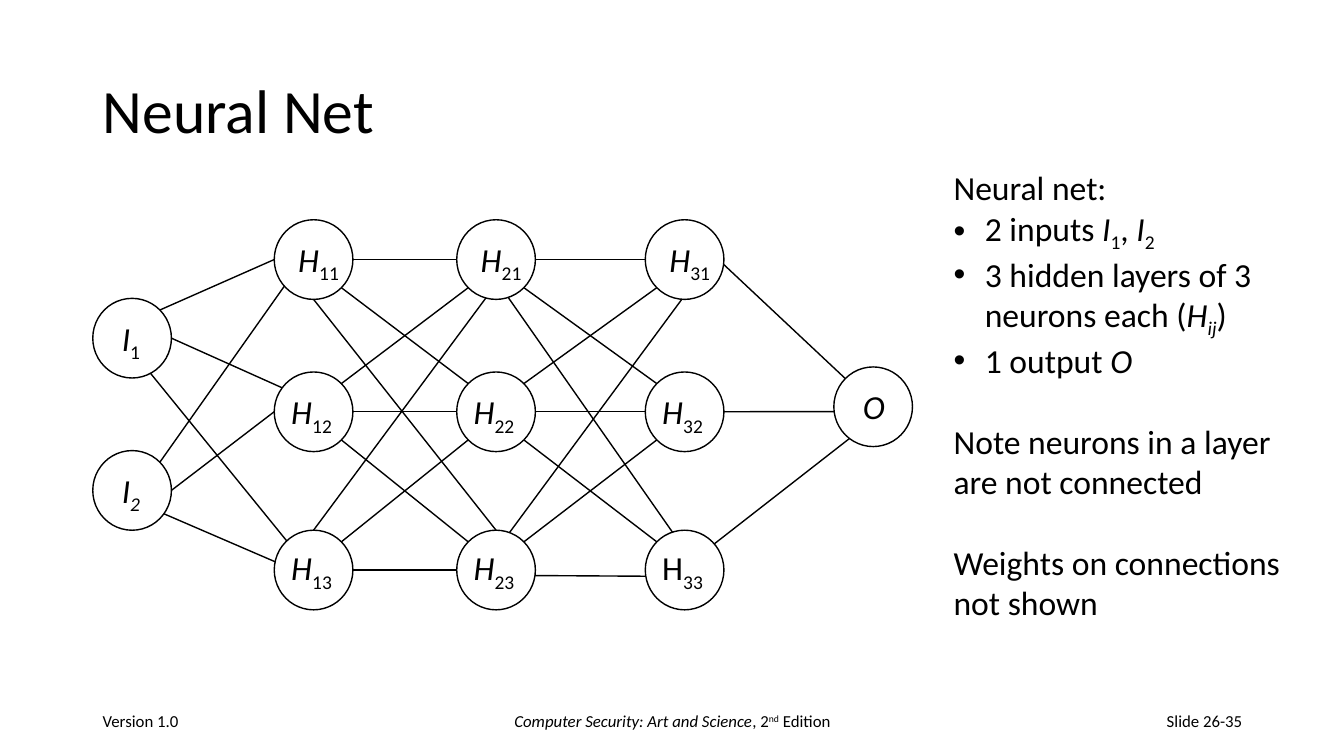
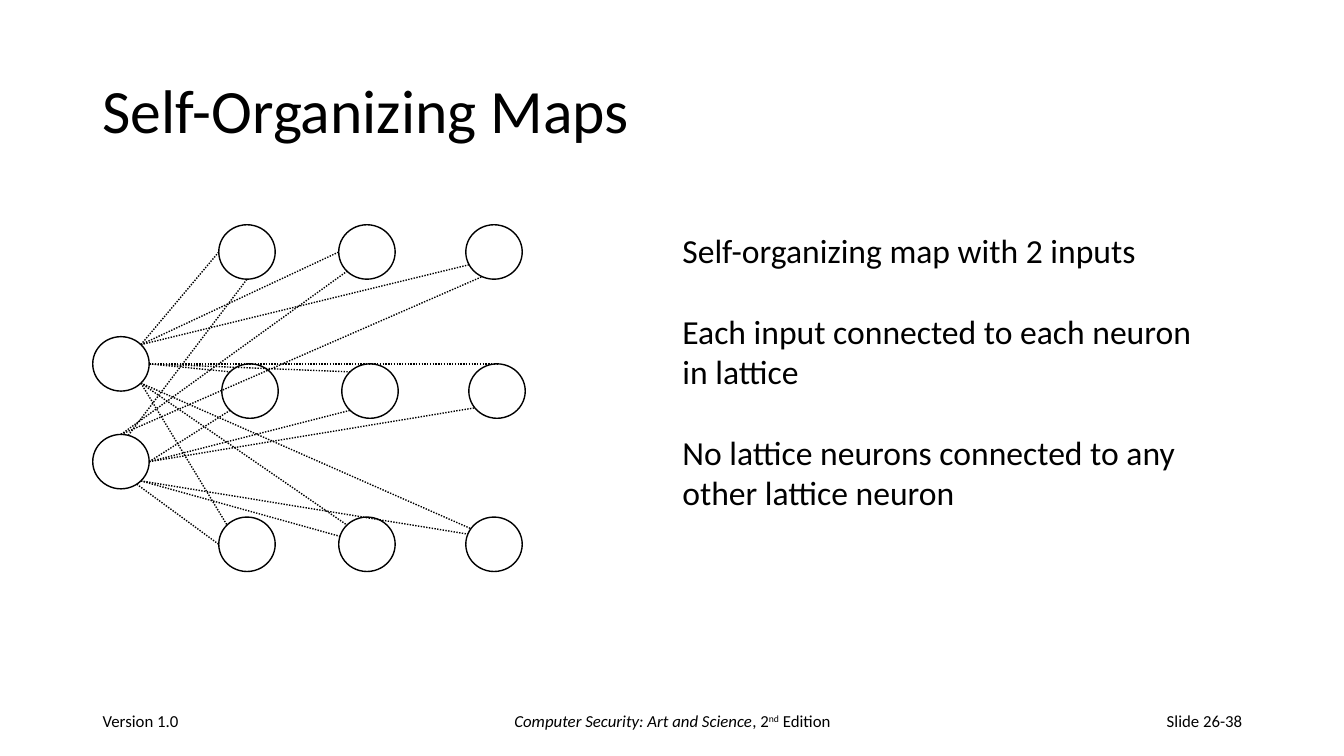
from dataclasses import dataclass
from itertools import product
from math import cos, radians, sin
from typing import NamedTuple

from lxml.etree import SubElement
from pptx import Presentation
from pptx.dml.color import RGBColor
from pptx.enum.dml import MSO_LINE
from pptx.enum.shapes import MSO_CONNECTOR, MSO_SHAPE
from pptx.enum.text import MSO_ANCHOR, PP_ALIGN
from pptx.oxml.ns import qn
from pptx.slide import Slide
from pptx.util import Inches, Pt

INK = "000000"
FONT = "Calibri"
BODY_SIZE, FOOTER_SIZE, TITLE_SIZE = 24, 12, 44
BLANK_LAYOUT = 6
BULLET_INDENT = Inches(0.31)
SECTION_GAP = Pt(29)  # one body line
SUB, SUPER = -25, 30  # baseline shift in percent

# Compass points of a circle, in degrees clockwise from the top
N, NE, E, SE, S, SW, W, NW = range(0, 360, 45)


class Run(NamedTuple):
    text: str
    italic: bool = False
    shift: int = 0


@dataclass(frozen=True)
class Para:
    runs: tuple[Run, ...]
    bullet: bool = False
    layout: tuple[tuple[str, object], ...] = ()


@dataclass(frozen=True)
class Neuron:
    left: float
    top: float
    width: float
    height: float

    def rim(self, angle: float) -> tuple[int, int]:
        """Point on the outline at a compass angle."""
        x = self.left + self.width / 2 * (1 + sin(radians(angle)))
        y = self.top + self.height / 2 * (1 - cos(radians(angle)))
        return Inches(x), Inches(y)


class Label(NamedTuple):
    runs: tuple[Run, ...]
    dx: float
    dy: float


def color(hex_value: str) -> RGBColor:
    return RGBColor.from_string(hex_value)


def plain(text: str, **layout: object) -> Para:
    return Para((Run(text),), layout=tuple(layout.items()))


def add_text(slide: Slide, box: tuple[float, float, float, float], paras: list[Para],
             size: int = BODY_SIZE, **frame_format: object) -> None:
    frame = slide.shapes.add_textbox(*map(Inches, box)).text_frame
    for name, value in ({"word_wrap": True} | frame_format).items():
        setattr(frame, name, value)
    for position, para in enumerate(paras):
        paragraph = frame.add_paragraph() if position else frame.paragraphs[0]
        if para.bullet:
            properties = paragraph._p.get_or_add_pPr()
            properties.set("marL", str(BULLET_INDENT))
            properties.set("indent", str(-BULLET_INDENT))
            SubElement(properties, qn("a:buFont")).set("typeface", "Arial")
            SubElement(properties, qn("a:buChar")).set("char", "•")
        for name, value in para.layout:
            setattr(paragraph, name, value)
        for text, italic, shift in para.runs:
            run = paragraph.add_run()
            run.text = text
            font_format = {"name": FONT, "size": Pt(size), "italic": italic}
            for name, value in font_format.items():
                setattr(run.font, name, value)
            run.font.color.rgb = color(INK)
            if shift:
                run._r.get_or_add_rPr().set("baseline", str(shift * 1000))


def add_neuron(slide: Slide, neuron: Neuron, label: Label | None = None) -> None:
    place = (neuron.left, neuron.top, neuron.width, neuron.height)
    circle = slide.shapes.add_shape(MSO_SHAPE.OVAL, *map(Inches, place))
    circle.shadow.inherit = False
    circle.fill.background()
    circle.line.color.rgb = color(INK)
    circle.line.width = Pt(1)
    if label:
        box = (neuron.left + label.dx, neuron.top + label.dy, 0.64, 0.5)
        add_text(slide, box, [Para(label.runs)], word_wrap=False)


def add_link(slide: Slide, source: Neuron, target: Neuron,
             angles: tuple[float, float], dash: MSO_LINE | None = None) -> None:
    leave, arrive = angles
    link = slide.shapes.add_connector(
        MSO_CONNECTOR.STRAIGHT, *source.rim(leave), *target.rim(arrive))
    link.line.color.rgb = color(INK)
    link.line.width = Pt(1)
    if dash:
        link.line.dash_style = dash
    SubElement(link._element.spPr, qn("a:effectLst"))


def new_slide(deck: Presentation, title: str, number: int) -> Slide:
    """Blank slide with the shared title and footers."""
    slide = deck.slides.add_slide(deck.slide_layouts[BLANK_LAYOUT])
    middle = {"vertical_anchor": MSO_ANCHOR.MIDDLE}
    add_text(slide, (0.92, 0.4, 11.5, 1.45), [plain(title, line_spacing=0.9)],
             TITLE_SIZE, **middle)
    book = (Run("Computer Security: Art and Science", True), Run(", 2"),
            Run("nd", shift=SUPER), Run(" Edition"))
    footers = [
        (0.92, 3, PP_ALIGN.LEFT, (Run("Version 1.0"),)),
        (4.42, 4.5, PP_ALIGN.CENTER, book),
        (9.42, 3, PP_ALIGN.RIGHT, (Run(f"Slide 26-{number}"),)),
    ]
    for left, width, alignment, runs in footers:
        footer = Para(runs, layout=(("alignment", alignment),))
        add_text(slide, (left, 6.95, width, 0.4), [footer], FOOTER_SIZE, **middle)
    return slide


def symbol(letter: str, index: str, italic: bool = True,
           italic_index: bool = False) -> tuple[Run, ...]:
    return Run(letter, italic), Run(index, italic_index, SUB)


# Angles by rows moved down from one hidden layer to the next
HIDDEN_ANGLES = {-2: (N, 195), -1: (NE, SW), 0: (E, W), 1: (SE, NW), 2: (S, N)}
# Angles that differ, by layer and the rows at both ends
SPECIAL_ANGLES = {
    (0, 0, 0): (NE, W), (0, 0, 1): (E, 307), (0, 0, 2): (152, 317),
    (0, 1, 0): (NE, 228), (0, 1, 1): (E, W), (0, 1, 2): (126, 282),
    (2, 0, 2): (162, 342), (2, 2, 0): (20, 184), (2, 2, 2): (98, 261),
    (3, 0, 0): (97, NW), (3, 1, 0): (E, 263), (3, 2, 0): (49, 217),
}


def neural_net(deck: Presentation) -> None:
    slide = new_slide(deck, "Neural Net", 35)
    size = (0.78, 0.79)
    hidden_tops = (2.18, 3.69, 5.26)
    inputs = [Neuron(0.92, top, *size) for top in (2.96, 4.47)]
    hidden = [[Neuron(left, top, *size) for top in hidden_tops]
              for left in (2.72, 4.53, 6.4)]
    output = Neuron(8.27, 3.64, *size)

    for row, neuron in enumerate(inputs, 1):
        runs = symbol("I", str(row), italic_index=row == 2)
        add_neuron(slide, neuron, Label(runs, 0.19, 0.14))
    for layer, neurons in enumerate(hidden, 1):
        for row, neuron in enumerate(neurons, 1):
            runs = symbol("H", f"{layer}{row}", italic=(layer, row) != (3, 3))
            dx, dy = 0.14 if row == 1 else 0.07, 0.12 if row == 3 else 0.14
            add_neuron(slide, neuron, Label(runs, dx, dy))
    add_neuron(slide, output, Label((Run("O", True),), 0.19, 0.14))

    layers = [inputs, *hidden, [output]]
    for layer, (sources, targets) in enumerate(zip(layers, layers[1:])):
        for (start, source), (end, target) in product(enumerate(sources), enumerate(targets)):
            angles = SPECIAL_ANGLES.get((layer, start, end)) or HIDDEN_ANGLES[end - start]
            add_link(slide, source, target, angles)

    notes = [
        plain("Neural net:"),
        Para((Run("2 inputs "), *symbol("I", "1"), Run(", "), *symbol("I", "2")), True),
        Para((Run("3 hidden layers of 3 neurons each ("),
              *symbol("H", "ij", italic_index=True), Run(")")), True),
        Para((Run("1 output "), Run("O", True)), True),
        plain("Note neurons in a layer are not connected", space_before=SECTION_GAP),
        plain("Weights on connections not shown", space_before=SECTION_GAP),
    ]
    add_text(slide, (9.36, 1.61, 3.5, 4.54), notes)


# For each input and lattice row: the angles of the links to the three columns
LATTICE_ANGLES = [
    [((NE, W), (NE, W), (NE, 242)),
     ((E, NW), (E, NW), (E, N)),
     ((SE, NW), (SE, NW), (SE, 305))],
    [((15, S), (N, SW), (N, 205)),
     ((E, SW), (E, SW), (E, 232)),
     ((146, W), (SE, 287), (SE, 292))],
]


def self_organizing_maps(deck: Presentation) -> None:
    slide = new_slide(deck, "Self-Organizing Maps", 38)
    size = (0.56, 0.54)
    inputs = [Neuron(0.92, top, *size) for top in (3.34, 4.31)]
    lattice = [[Neuron(left + shift, top, *size) for left in (2.17, 3.36, 4.62)]
               for top, shift in ((2.23, 0), (3.61, 0.03), (5.13, 0))]
    for neuron in (*inputs, *(neuron for row in lattice for neuron in row)):
        add_neuron(slide, neuron)
    for source, angle_rows in zip(inputs, LATTICE_ANGLES):
        for targets, angle_row in zip(lattice, angle_rows):
            for target, angles in zip(targets, angle_row):
                add_link(slide, source, target, angles, MSO_LINE.ROUND_DOT)

    notes = [
        plain("Self-organizing map with 2 inputs"),
        plain("Each input connected to each neuron in lattice", space_before=SECTION_GAP),
        plain("No lattice neurons connected to any other lattice neuron",
              space_before=SECTION_GAP),
    ]
    add_text(slide, (6.67, 2.23, 5.4, 2.93), notes)


def main() -> None:
    deck = Presentation()
    deck.slide_width, deck.slide_height = Inches(13.33), Inches(7.5)
    neural_net(deck)
    self_organizing_maps(deck)
    deck.save("out.pptx")


if __name__ == "__main__":
    main()
